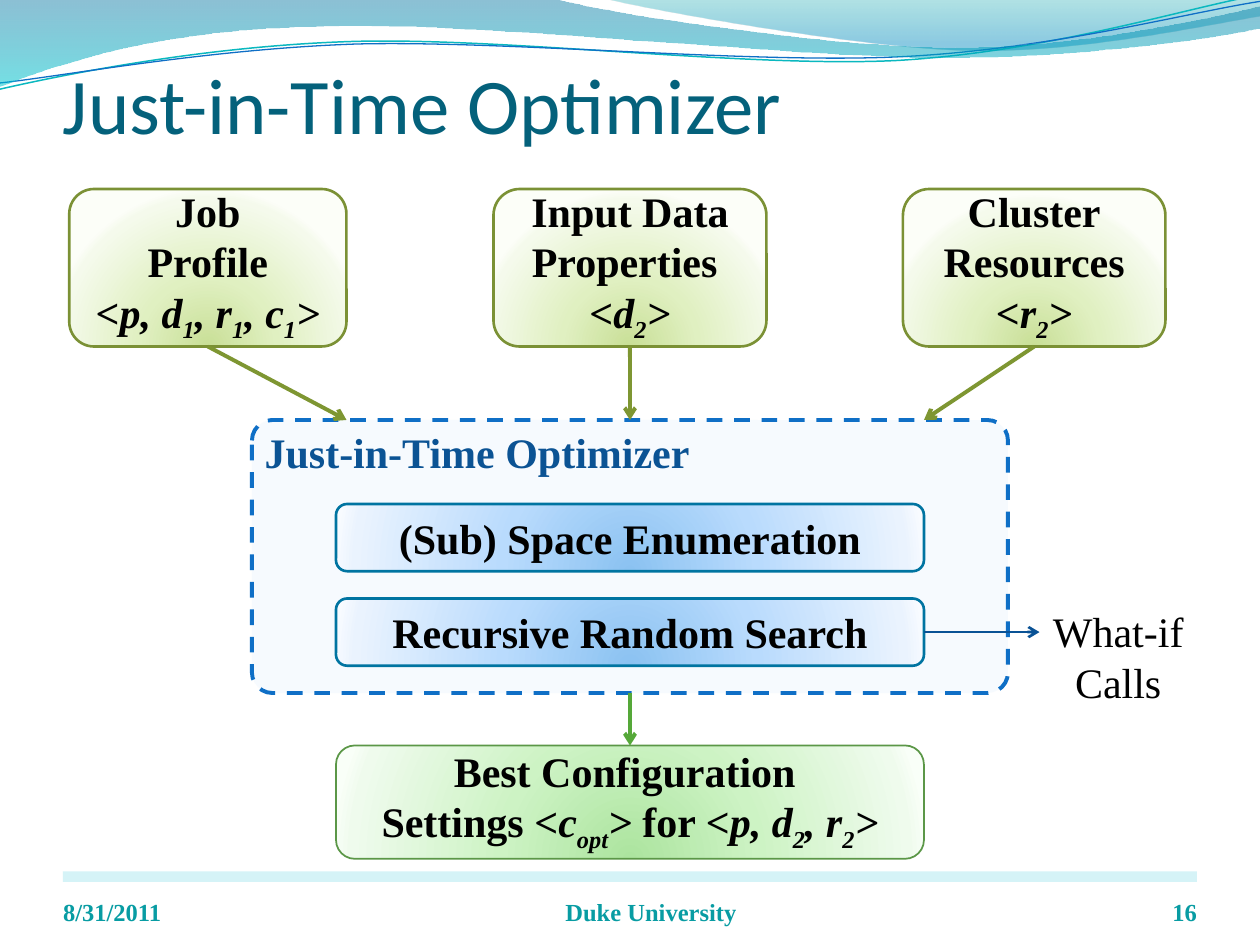
import math

import pptx
import pptx.util
import pptx.dml.color
import pptx.enum.dml
import pptx.enum.shapes
import pptx.enum.text
import pptx.oxml
import pptx.oxml.ns

Pt = pptx.util.Pt
SHAPE = pptx.enum.shapes.MSO_SHAPE
ALIGN = pptx.enum.text.PP_ALIGN
ANCHOR = pptx.enum.text.MSO_ANCHOR
qn = pptx.oxml.ns.qn
NS = pptx.oxml.ns.nsdecls("a")

COLS, ROWS = 120, 90  # slide grid; one cell is 1/12 inch
SERIF = "Times New Roman"
INSETS = (1.2, 0.6, 1.2, 0.6)
TIGHT = (1.2, 0, 1.2, 0.6)
GLOW = '<a:path path="circle"><a:fillToRect l="50000" t="130000" r="50000" b="-30000"/></a:path>'
DOWN = '<a:lin ang="5400000" scaled="0"/>'
OLIVE = [(0, "C9DF97"), (43, "E0F0C1"), (93, "F5FAEC"), (100, "FCFEF8")]
BLUE = [(0, "8BC2F1"), (43, "B9DBFD"), (93, "EAF3FE"), (100, "F8FBFF")]
GREEN = [(0, "ACE49F"), (43, "CDF3C4"), (93, "EFFBED"), (100, "F9FFF8")]


def grid(n):
    return pptx.util.Inches(n / 12)


def rgb(value):
    return pptx.dml.color.RGBColor.from_string(value)


def add_xml(parent, xml):
    parent.append(pptx.oxml.parse_xml(xml))


def fill_solid(sp, color, opacity):
    sp.fill.solid()
    sp.fill.fore_color.rgb = rgb(color)
    clr = sp.element.spPr.find(qn("a:solidFill"))[0]
    add_xml(clr, f'<a:alpha {NS} val="{opacity * 1000}"/>')


def fill_gradient(sp, stops, direction):
    """Each stop is (position, colour) or (position, colour, opacity), in percent."""
    gs = ""
    for pos, color, *opacity in stops:
        alpha = f'<a:alpha val="{opacity[0] * 1000}"/>' if opacity else ""
        gs += f'<a:gs pos="{pos * 1000}"><a:srgbClr val="{color}">{alpha}</a:srgbClr></a:gs>'
    sp.fill.background()
    spPr = sp.element.spPr
    spPr.replace(spPr.find(qn("a:noFill")), pptx.oxml.parse_xml(
        f'<a:gradFill {NS} rotWithShape="1"><a:gsLst>{gs}</a:gsLst>{direction}</a:gradFill>'))


def set_line(sp, color, width):
    sp.line.color.rgb = rgb(color)
    sp.line.width = Pt(width)


def write(sp, lines, size=24, color="000000", bold=True, font=SERIF,
          align=ALIGN.CENTER, anchor=ANCHOR.MIDDLE, insets=INSETS):
    """Fill in paragraphs; *...* is italic and _..._ is subscript."""
    tf = sp.text_frame
    tf.word_wrap = True
    tf.vertical_anchor = anchor
    tf.margin_left, tf.margin_top, tf.margin_right, tf.margin_bottom = map(grid, insets)
    for i, line in enumerate(lines):
        p = tf.add_paragraph() if i else tf.paragraphs[0]
        p.alignment = align
        for j, part in enumerate(line.split("*")):
            for k, text in enumerate(part.split("_")):
                if not text:
                    continue
                r = p.add_run()
                r.text = text
                r.font.name, r.font.size, r.font.bold = font, Pt(size), bold
                r.font.color.rgb = rgb(color)
                if j % 2:
                    r.font.italic = True
                if k % 2:
                    r.font._element.set("baseline", "-25000")


def add_text(s, box, lines, **style):
    write(s.shapes.add_textbox(*map(grid, box)), lines, **style)


def add_box(s, box, kind=SHAPE.ROUNDED_RECTANGLE, radius=None):
    sp = s.shapes.add_shape(kind, *map(grid, box))
    sp.shadow.inherit = False
    if radius:
        sp.adjustments[0] = radius
    return sp


def add_card(s, box, lines, stops, line, width=1.5, radius=None, insets=TIGHT):
    sp = add_box(s, box, radius=radius)
    fill_gradient(sp, stops, GLOW)
    set_line(sp, line, width)
    write(sp, lines, insets=insets)
    return sp


def add_arrow(s, start, end, color, width=2.25, source=None, target=None):
    """source and target are (shape, side) pairs to join."""
    cn = s.shapes.add_connector(pptx.enum.shapes.MSO_CONNECTOR.STRAIGHT,
                                *map(grid, start + end))
    if source:
        cn.begin_connect(*source)
    if target:
        cn.end_connect(*target)
    set_line(cn, color, width)
    add_xml(cn.line._get_or_add_ln(), f'<a:tailEnd {NS} type="arrow"/>')
    add_xml(cn.element.spPr, f"<a:effectLst {NS}/>")


def add_outline(s, start, segments, closed):
    """Segments hold one point for a line, three for a cubic curve; points in inches."""
    emu = [(round(x * 914400), round(y * 914400)) for x, y in [start] + sum(segments, [])]
    fb = s.shapes.build_freeform(*emu[0])
    fb.add_line_segments(emu[1:], close=closed)
    sp = fb.convert_to_shape()
    sp.shadow.inherit = False
    # Join each three points into one curve
    nodes = iter(list(sp.element.spPr.iter(qn("a:lnTo"))))
    for segment in segments:
        first, *rest = [next(nodes) for _ in segment]
        if rest:
            bezier = pptx.oxml.parse_xml(f"<a:cubicBezTo {NS}/>")
            first.addprevious(bezier)
            for node in [first] + rest:
                bezier.append(node[0])
                node.getparent().remove(node)
    return sp


def add_band(s, start, segments, stops):
    sp = add_outline(s, start, segments, True)
    fill_gradient(sp, stops, DOWN)
    sp.line.fill.background()


def add_swoosh(s, points, color, width, center, tilt=-2):
    """A curve turned by tilt degrees around its centre."""
    a = math.radians(-tilt)
    cx, cy = center
    flat = [(cx + (x - cx) * math.cos(a) - (y - cy) * math.sin(a),
             cy + (x - cx) * math.sin(a) + (y - cy) * math.cos(a)) for x, y in points]
    sp = add_outline(s, flat[0], [flat[i:i + 3] for i in range(1, len(flat), 3)], False)
    sp.rotation = 360 + tilt
    sp.fill.background()
    set_line(sp, color, width)


def draw_waves(s):
    add_band(s, (4.79, -0.01), [
        [(5.09, 0.07), (6.82, 0.38), (7.69, 0.4)], [(8.56, 0.42), (9.61, 0.19), (10, 0.13)],
        [(10, 0)]], [(0, "00A1A9", 30), (80, "008BBF", 45)])
    add_swoosh(s, [(-0.01, 0.71), (0.47, 0.6), (1.58, 0.37), (2.77, 0.33), (3.96, 0.29),
                   (5.92, 0.54), (7.12, 0.48), (8.32, 0.41), (9.39, 0.07), (9.99, -0.04)],
               "0AB8BF", 0.85, (4.99, 0.35))
    add_swoosh(s, [(-0.01, 0.66), (0.47, 0.61), (1.64, 0.39), (2.83, 0.35), (4.03, 0.32),
                   (5.97, 0.51), (7.16, 0.45), (8.36, 0.39), (9.42, 0.1), (10.01, 0.01)],
               "0F6FC6", 0.75, (5, 0.36))
    add_band(s, (0, -0.01), [
        [(4.4, -0.01)],
        [(4.76, 0.1), (6.64, 0.38), (7.58, 0.38)], [(8.53, 0.38), (9.58, 0.15), (10, 0.05)],
        [(10.01, 0.22)],
        [(9.83, 0.27), (8.7, 0.46), (7.46, 0.46)], [(6.22, 0.46), (3.82, 0.17), (2.57, 0.21)],
        [(1.29, 0.22), (0.46, 0.51), (-0.01, 0.69)]], [(0, "0074A1", 45), (100, "00C6CF", 55)])


def draw_footer(s, x, y, w):
    rule = add_box(s, (x, y, w, 1), SHAPE.RECTANGLE)
    fill_solid(rule, "B3EAF2", 55)
    rule.line.fill.background()
    for left, width, text, align in ((x, 28, "8/31/2011", ALIGN.LEFT),
                                     (x + 34, 44, "Duke University", ALIGN.CENTER),
                                     (x + w - 10, 10, "16", ALIGN.RIGHT)):
        add_text(s, (left, y + 0.4, width, 4.8), [text], size=14, color="089CA3",
                 align=align, anchor=ANCHOR.BOTTOM, insets=(0, 0, 0, 0))


def draw_inputs(s, y, h):
    cards = ((6.6, 26.4, ["Job", "Profile", "*<p, d_1_, r_1_, c_1_>*"], 0.157, TIGHT),
             (47, 26, ["Input Data", "Properties ", "*<d_2_>*"], None, (0, 0, 0, 0.6)),
             (86, 25, ["Cluster", "Resources", "*<r_2_>*"], None, TIGHT))
    return [add_card(s, (x, y, w, h), lines, OLIVE, "7B9135", radius=radius, insets=insets)
            for x, w, lines, radius, insets in cards]


def draw_optimizer(s, x, y, w, h):
    frame = add_box(s, (x, y, w, h), radius=0.075)
    fill_solid(frame, "C8E3FB", 15)
    set_line(frame, "0F6FC6", 2.25)
    frame.line.dash_style = pptx.enum.dml.MSO_LINE.DASH
    steps = [add_card(s, (x + 8, y + 8 + 9 * i, w - 16, 6.4), [text], BLUE, "0074A1", insets=INSETS)
             for i, text in enumerate(("(Sub) Space Enumeration", "Recursive Random Search"))]
    add_text(s, (x, y, 48, 6), ["Just-in-Time Optimizer"], color="0B5394",
             align=ALIGN.LEFT, anchor=ANCHOR.TOP)
    return frame, steps[-1]


def draw_diagram(s):
    best = add_card(s, (32, 71, 56, 10.8),
                    ["Best Configuration ", "Settings *<c_opt_>* for *<p, d_2_, r_2_>*"],
                    GREEN, "5B9747", width=1)
    frame, search = draw_optimizer(s, 24, 40, 72, 26)
    job, data, cluster = draw_inputs(s, 18, 15)
    # Inputs to optimizer, optimizer to result
    add_arrow(s, (19.8, 33), (33, 40), "7E9632", source=(job, 2))
    add_arrow(s, (60, 33), (60, 40), "7E9632", source=(data, 2), target=(frame, 0))
    add_arrow(s, (98.5, 33), (88, 40), "7E9632", source=(cluster, 2))
    add_arrow(s, (60, 66), (60, 71), "55A839", source=(frame, 2), target=(best, 0))
    # What-if calls
    add_arrow(s, (88, 60.2), (99, 60.2), "095295", 1.5, source=(search, 3))
    add_text(s, (99, 57.1, 15, 10.9), ["What-if Calls"], bold=False, anchor=ANCHOR.TOP)


def main():
    prs = pptx.Presentation()
    prs.slide_width, prs.slide_height = grid(COLS), grid(ROWS)
    s = prs.slides.add_slide(prs.slide_layouts[6])
    draw_waves(s)
    add_text(s, (6, 4, COLS - 12, 11), ["Just-in-Time Optimizer"], size=45, color="04617B",
             bold=False, font="Calibri", align=ALIGN.LEFT, insets=(0, 0.6, 0, 0))
    draw_footer(s, 6, ROWS - 7, COLS - 12)
    draw_diagram(s)
    prs.save("out.pptx")


if __name__ == "__main__":
    main()
